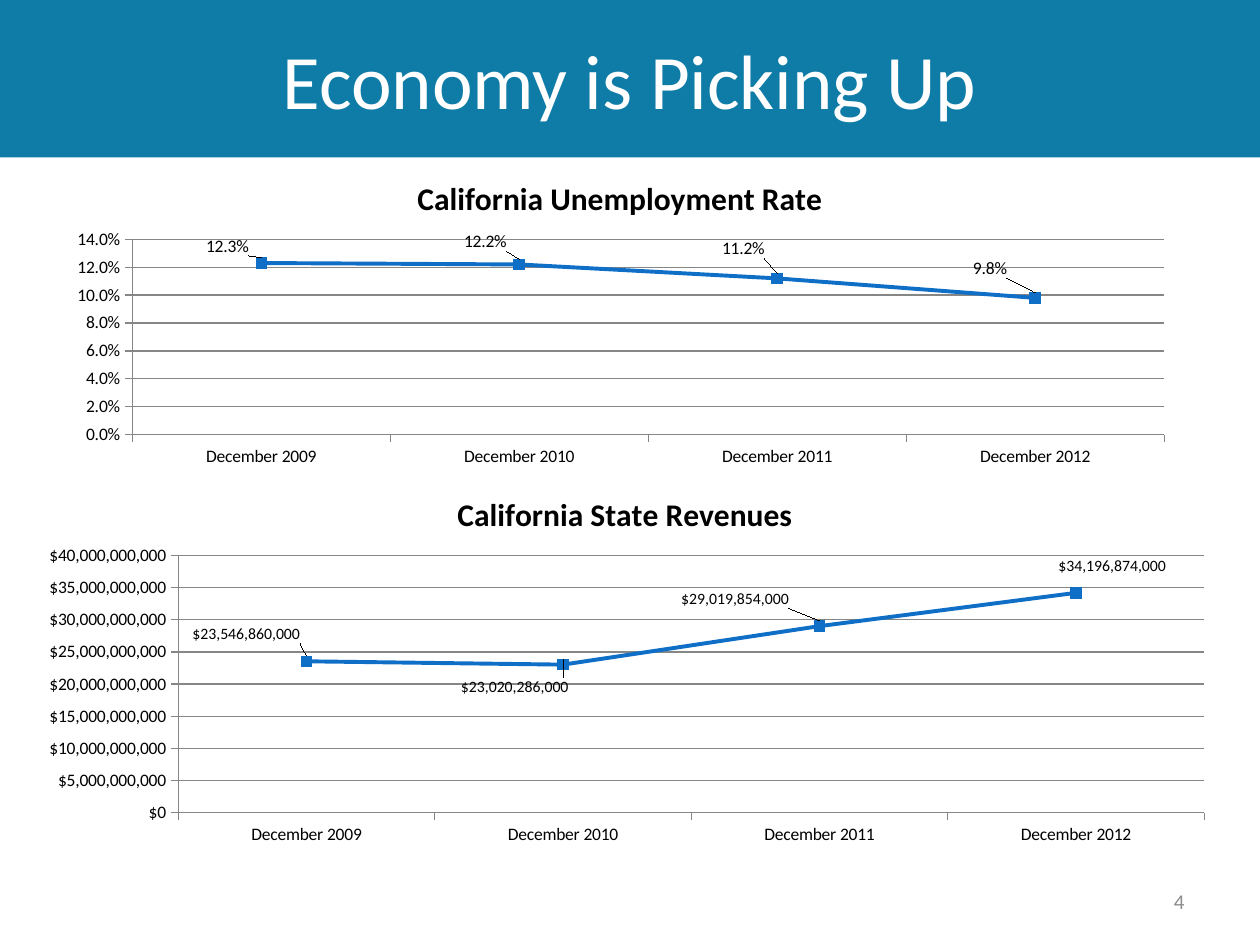
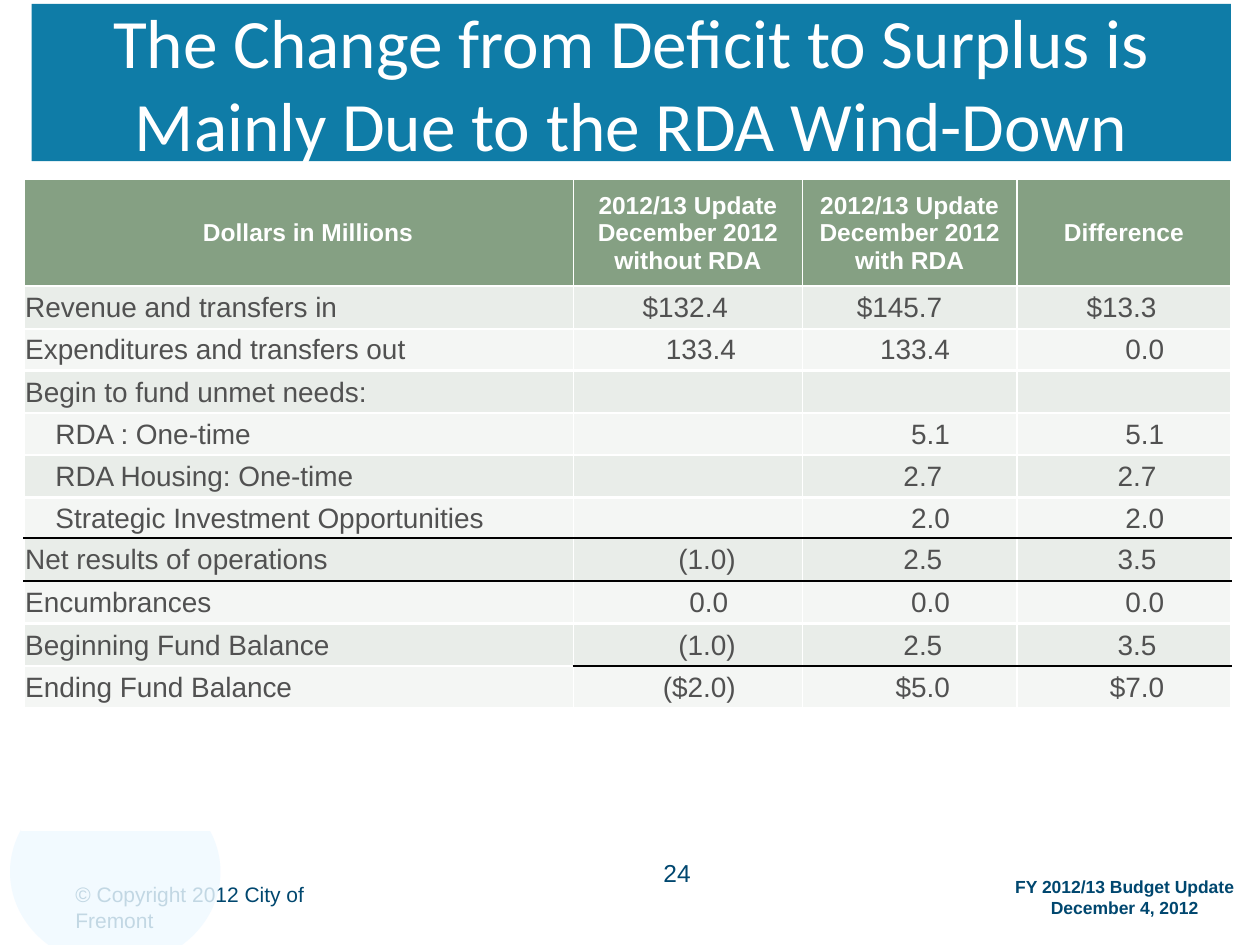
from dataclasses import dataclass

from lxml.etree import SubElement
from pptx import Presentation
from pptx.chart.data import CategoryChartData
from pptx.dml.color import RGBColor
from pptx.enum.chart import XL_CHART_TYPE, XL_LABEL_POSITION, XL_MARKER_STYLE, XL_TICK_MARK
from pptx.enum.shapes import MSO_SHAPE
from pptx.enum.text import MSO_ANCHOR, PP_ALIGN
from pptx.oxml import parse_xml
from pptx.oxml.ns import nsdecls, qn
from pptx.util import Inches, Pt


@dataclass(frozen=True)
class Theme:
    heading_font: str = "Calibri"
    body_font: str = "Arial"
    band: str = "0F7CA7"
    white: str = "FFFFFF"
    black: str = "000000"
    grid: str = "868686"
    page_number: str = "8C8C8C"
    series: str = "0F6FC6"
    footer: str = "00476F"
    bubble: str = "EFF9FF"
    table_head: str = "85A083"
    table_text: str = "515151"
    stripes: tuple = ("F4F6F4", "E9EDE9")
    title_size: float = 44
    long_title_size: float = 39.6
    chart_title_size: float = 18
    chart_size: float = 10
    small_label_size: float = 9
    head_size: float = 14
    cell_size: float = 16
    footer_size: float = 12
    date_size: float = 10


THEME = Theme()
MONTHS = [f"December {year}" for year in range(2009, 2013)]
HEADINGS = [
    "Dollars in Millions",
    "2012/13 Update December 2012 without RDA",
    "2012/13 Update December 2012\vwith RDA",
    "Difference",
]
BUDGET = [
    ("Revenue and transfers in", "$132.4 ", "$145.7 ", "$13.3 "),
    ("Expenditures and transfers out", "133.4", "133.4", "0.0"),
    ("Begin to fund unmet needs:", "", "", ""),
    ("RDA : One-time", "", "5.1", "5.1"),
    ("RDA Housing: One-time", "", "2.7 ", "2.7 "),
    ("Strategic Investment Opportunities", "", "2.0", "2.0"),
    ("Net results of operations", "(1.0)", "2.5 ", "3.5 "),
    ("Encumbrances", "0.0 ", "0.0", "0.0"),
    ("Beginning Fund Balance", "(1.0)", "2.5 ", "3.5 "),
    ("Ending Fund Balance", "($2.0)", "$5.0", "$7.0"),
]
INDENTED_ROWS = (4, 5, 6)
COLUMN_WIDTHS = (4.36, 1.82, 1.7, 1.7)
ROW_HEIGHTS = (0.85, 0.34, 0.33, 0.34, 0.33, 0.34, 0.32, 0.34, 0.34, 0.34, 0.33)


def color(value):
    return RGBColor.from_string(value)


def style_font(font, size, ink, family, bold=False):
    font.size = Pt(size)
    font.name = family
    font.bold = bold
    font.color.rgb = color(ink)


def write(frame, text, size, ink, family, align=PP_ALIGN.LEFT, bold=False):
    frame.text = text
    for paragraph in frame.paragraphs:
        paragraph.alignment = align
        for span in paragraph.runs:
            style_font(span.font, size, ink, family, bold)


def add_block(page, kind, bounds, fill, line=None):
    block = page.shapes.add_shape(kind, *map(Inches, bounds))
    block.shadow.inherit = False
    block.fill.solid()
    block.fill.fore_color.rgb = color(fill)
    if line:
        block.line.color.rgb = color(line)
        block.line.width = Pt(0.75)
    else:
        block.line.fill.background()
    return block


def add_title(page, text, bounds, size):
    band = add_block(page, MSO_SHAPE.RECTANGLE, bounds, THEME.band)
    frame = band.text_frame
    frame.word_wrap = True
    frame.vertical_anchor = MSO_ANCHOR.MIDDLE
    write(frame, text, size, THEME.white, THEME.heading_font, PP_ALIGN.CENTER)


def add_text(page, text, bounds, size, ink, family, align=PP_ALIGN.LEFT,
             anchor=MSO_ANCHOR.TOP, bold=False):
    frame = page.shapes.add_textbox(*map(Inches, bounds)).text_frame
    frame.word_wrap = True
    frame.vertical_anchor = anchor
    write(frame, text, size, ink, family, align, bold)


def manual_layout(**settings):
    layout = parse_xml(f"<c:layout {nsdecls('c')}><c:manualLayout/></c:layout>")
    for name, value in settings.items():
        SubElement(layout[0], qn(f"c:{name}")).set("val", str(value))
    return layout


def style_axis(axis):
    axis.major_tick_mark = XL_TICK_MARK.OUTSIDE
    axis.minor_tick_mark = XL_TICK_MARK.NONE
    axis.format.line.color.rgb = color(THEME.grid)
    style_font(axis.tick_labels.font, THEME.chart_size, THEME.black, THEME.heading_font)


def style_value_axis(axis, top, step, number_format):
    style_axis(axis)
    axis.minimum_scale = 0
    axis.maximum_scale = top
    axis.major_unit = step
    axis.has_major_gridlines = True
    axis.major_gridlines.format.line.color.rgb = color(THEME.grid)
    axis.tick_labels.number_format = number_format
    axis.tick_labels.number_format_is_linked = False


def style_series(series):
    series.smooth = False
    series.format.line.color.rgb = color(THEME.series)
    series.format.line.width = Pt(2.25)
    series.marker.style = XL_MARKER_STYLE.SQUARE
    series.marker.size = 6
    series.marker.format.fill.solid()
    series.marker.format.fill.fore_color.rgb = color(THEME.series)
    series.marker.format.line.color.rgb = color(THEME.series)


def label_points(series, size, number_format, offsets):
    labels = series.data_labels
    labels.show_value = True
    labels.number_format = number_format
    labels.number_format_is_linked = False
    style_font(labels.font, size, THEME.black, THEME.heading_font)
    for index, (x, y) in enumerate(offsets):
        label = series.points[index].data_label
        style_font(label.font, size, THEME.black, THEME.heading_font)
        label.position = XL_LABEL_POSITION.ABOVE
        entry = labels._element.findall(qn("c:dLbl"))[index]
        entry.insert(1, manual_layout(x=x, y=y))


def add_line_chart(page, title, bounds, values, number_format, top, step, plot, label_size, offsets):
    data = CategoryChartData(number_format=number_format)
    data.categories = MONTHS
    data.add_series("Series 1", values)
    chart = page.shapes.add_chart(XL_CHART_TYPE.LINE_MARKERS, *map(Inches, bounds), data).chart
    style_font(chart.font, THEME.chart_size, THEME.black, THEME.heading_font)
    chart.has_legend = False
    chart.has_title = True
    write(chart.chart_title.text_frame, title, THEME.chart_title_size, THEME.black,
          THEME.heading_font, PP_ALIGN.CENTER, True)
    chart.chart_title.include_in_layout = False
    style_axis(chart.category_axis)
    style_value_axis(chart.value_axis, top, step, number_format)
    chart.plots[0].vary_by_categories = False
    series = chart.plots[0].series[0]
    style_series(series)
    label_points(series, label_size, number_format, offsets)
    area = chart._chartSpace.chart.plotArea
    for old in area.findall(qn("c:layout")):
        area.remove(old)
    left, upper, width, height = plot
    area.insert(0, manual_layout(layoutTarget="inner", xMode="edge", yMode="edge",
                                 x=left, y=upper, w=width, h=height))


def rule_below(edge, column):
    if edge in (7, 8) or (edge == 10 and column > 0):
        return THEME.black, 1.5
    return THEME.white, 1 if edge in (0, len(ROW_HEIGHTS)) else 1.5


def set_borders(cell, row, column):
    side = (THEME.white, 1)
    borders = {"lnL": side, "lnR": side,
               "lnT": rule_below(row, column), "lnB": rule_below(row + 1, column)}
    for index, (name, (ink, width)) in enumerate(borders.items()):
        line = parse_xml(
            f'<a:{name} {nsdecls("a")} w="{Pt(width)}"><a:solidFill>'
            f'<a:srgbClr val="{ink}"/></a:solidFill></a:{name}>')
        cell._tc.get_or_add_tcPr().insert(index, line)


def fill_cell(cell, text, row, column):
    heading = row == 0
    number = column > 0 and not heading
    cell.margin_left = Inches(0.25 if row in INDENTED_ROWS and column == 0 else 0.01)
    if heading and column == 0:
        cell.margin_left = Inches(0.16)
    cell.margin_right = Inches(0.53 if number else 0.01)
    cell.margin_top = Inches(0.01)
    cell.margin_bottom = 0
    cell.vertical_anchor = MSO_ANCHOR.MIDDLE
    cell.fill.solid()
    cell.fill.fore_color.rgb = color(THEME.table_head if heading else THEME.stripes[row % 2])
    set_borders(cell, row, column)
    if heading:
        write(cell.text_frame, text, THEME.head_size, THEME.white, THEME.body_font,
              PP_ALIGN.CENTER, True)
    else:
        write(cell.text_frame, text, THEME.cell_size, THEME.table_text, THEME.body_font,
              PP_ALIGN.RIGHT if number else PP_ALIGN.LEFT)


def add_budget_table(page):
    rows = [HEADINGS, *BUDGET]
    table = page.shapes.add_table(len(rows), len(HEADINGS), Inches(0.19), Inches(1.42),
                                  Inches(sum(COLUMN_WIDTHS)), Inches(sum(ROW_HEIGHTS))).table
    table.horz_banding = False
    table.first_row = False
    for column, width in zip(table.columns, COLUMN_WIDTHS):
        column.width = Inches(width)
    for row, height in zip(table.rows, ROW_HEIGHTS):
        row.height = Inches(height)
    for row_index, texts in enumerate(rows):
        for column_index, text in enumerate(texts):
            fill_cell(table.cell(row_index, column_index), text, row_index, column_index)


def add_bubble(page):
    bubble = add_block(page, MSO_SHAPE.OVAL, (0.08, 6.17, 1.67, 1.5), THEME.bubble)
    shade = bubble.fill._xPr.find(qn("a:solidFill"))[0]
    SubElement(shade, qn("a:alpha")).set("val", "81000")
    add_block(page, MSO_SHAPE.RECTANGLE, (0.17, 6.17, 2.08, 0.42), THEME.white, THEME.white)


def build_economy(page):
    add_title(page, "Economy is Picking Up", (0, 0, 10, 1.25), THEME.title_size)
    add_text(page, "4", (8.75, 6.95, 0.75, 0.4), THEME.footer_size, THEME.page_number,
             THEME.heading_font, PP_ALIGN.RIGHT, MSO_ANCHOR.MIDDLE)
    add_line_chart(page, "California Unemployment Rate", (0.42, 1.25, 9, 2.5),
                   (0.123, 0.122, 0.112, 0.098), "0.0%", 0.14, 0.02,
                   (0.07, 0.26, 0.91, 0.62), THEME.chart_size,
                   ((-0.03, 0.01), (-0.03, -0.01), (-0.03, -0.03), (-0.04, -0.03)))
    add_line_chart(page, "California State Revenues", (0.17, 3.75, 9.58, 3),
                   (23546860000, 23020286000, 29019854000, 34196874000), '"$"#,##0',
                   40000000000, 5000000000, (0.13, 0.22, 0.85, 0.68), THEME.small_label_size,
                   ((-0.05, -0.02), (-0.04, 0.11), (-0.07, -0.02), (0.03, -0.02)))


def build_surplus(page):
    add_title(page, "The Change from Deficit to Surplus is Mainly Due to the RDA Wind-Down",
              (0.25, 0.03, 9.52, 1.25), THEME.long_title_size)
    add_text(page, "© Copyright 2012 City of Fremont", (0.5, 6.95, 2.33, 0.4),
             THEME.footer_size, THEME.footer, THEME.body_font)
    add_bubble(page)
    add_text(page, "24", (4.33, 6.68, 1.25, 0.5), THEME.head_size, THEME.footer,
             THEME.body_font, PP_ALIGN.RIGHT, MSO_ANCHOR.MIDDLE)
    add_text(page, "FY 2012/13 Budget Update\nDecember 4, 2012", (7.84, 6.9, 2.17, 0.44),
             THEME.date_size, THEME.footer, THEME.body_font, PP_ALIGN.CENTER, bold=True)
    add_budget_table(page)


def main():
    deck = Presentation()
    deck.slide_width = Inches(10)
    deck.slide_height = Inches(7.5)
    for build in (build_economy, build_surplus):
        build(deck.slides.add_slide(deck.slide_layouts[6]))
    deck.save("out.pptx")


if __name__ == "__main__":
    main()
